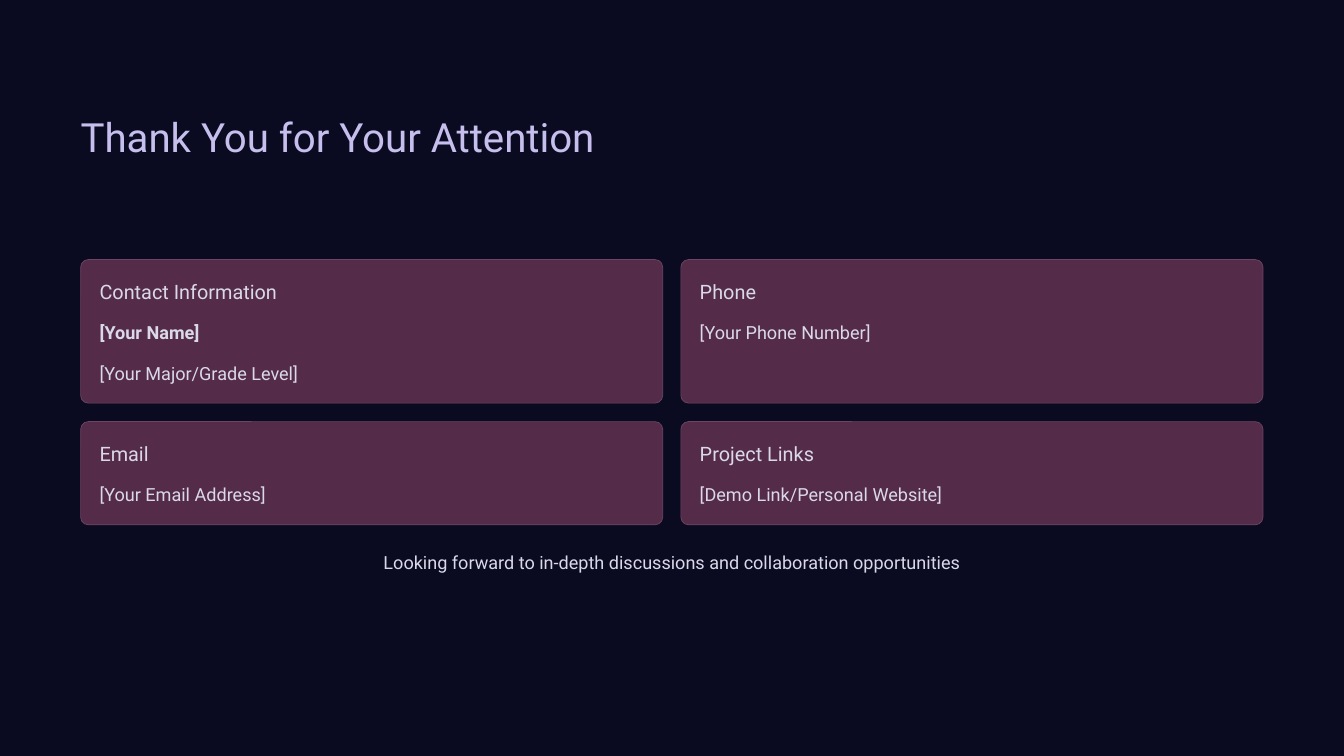
from pptx import Presentation
from pptx.dml.color import RGBColor
from pptx.enum.shapes import MSO_SHAPE
from pptx.enum.text import PP_ALIGN
from pptx.util import Cm, Pt

COLORS = {
    "background": "0A0B21",
    "title": "C6BFEE",
    "text": "DAD8E9",
    "card": "542C49",
    "border": "6D4562",
}
LEFT = 2.44
CARD_WIDTH = 17.6
COLUMN_STEP = 18.15
ROW_GAP = 0.56
PADDING = 0.57
BODY_OFFSET = 1.67
LINE_STEP = 1.22
CORNER_RADIUS = 0.23

CARD_ROWS = [
    (4.34, [
        ("Contact Information", ["[Your Name]", "[Your Major/Grade Level]"]),
        ("Phone", ["[Your Phone Number]"]),
    ]),
    (3.12, [
        ("Email", ["[Your Email Address]"]),
        ("Project Links", ["[Demo Link/Personal Website]"]),
    ]),
]


class SlideBuilder:
    font_name = "Roboto"

    def __init__(self, presentation):
        self.slide = presentation.slides.add_slide(presentation.slide_layouts[6])
        fill = self.slide.background.fill
        fill.solid()
        fill.fore_color.rgb = self.color("background")

    def color(self, name):
        return RGBColor.from_string(COLORS[name])

    def text(self, text, left, top, width, height, size=15.5, spacing=24.5,
             color="text", bold=False, align=PP_ALIGN.LEFT):
        shape = self.slide.shapes.add_textbox(Cm(left), Cm(top), Cm(width), Cm(height))
        frame = shape.text_frame
        frame.margin_left = frame.margin_right = 0
        frame.margin_top = frame.margin_bottom = 0
        frame.word_wrap = True
        frame.text = text
        paragraph = frame.paragraphs[0]
        paragraph.alignment = align
        paragraph.line_spacing = Pt(spacing)
        font = paragraph.runs[0].font
        font.name = self.font_name
        font.size = Pt(size)
        font.bold = bold
        font.color.rgb = self.color(color)

    def panel(self, left, top, width, height):
        shape = self.slide.shapes.add_shape(
            MSO_SHAPE.ROUNDED_RECTANGLE, Cm(left), Cm(top), Cm(width), Cm(height))
        shape.adjustments[0] = CORNER_RADIUS / height
        shape.shadow.inherit = False
        shape.fill.solid()
        shape.fill.fore_color.rgb = self.color("card")
        shape.line.color.rgb = self.color("border")
        shape.line.width = Pt(0.6)

    def card(self, left, top, height, heading, lines):
        self.panel(left, top, CARD_WIDTH, height)
        text_left = left + PADDING
        self.text(heading, text_left, top + PADDING, 6.12, 0.76, size=17, spacing=21.5)
        for index, line in enumerate(lines):
            self.text(line, text_left, top + BODY_OFFSET + index * LINE_STEP,
                      CARD_WIDTH - 2 * PADDING, 0.89, bold=line == "[Your Name]")


def main():
    presentation = Presentation()
    presentation.slide_width = Cm(40.64)
    presentation.slide_height = Cm(22.86)
    builder = SlideBuilder(presentation)
    builder.text("Thank You for Your Attention", LEFT, 3.35, CARD_WIDTH, 1.52,
                 size=34.5, spacing=43, color="title")
    top = 7.85
    for height, cards in CARD_ROWS:
        for column, (heading, lines) in enumerate(cards):
            builder.card(LEFT + column * COLUMN_STEP, top, height, heading, lines)
        top += height + ROW_GAP
    builder.text("Looking forward to in-depth discussions and collaboration opportunities",
                 LEFT, 16.48, COLUMN_STEP + CARD_WIDTH, 0.89, align=PP_ALIGN.CENTER)
    presentation.save("out.pptx")


if __name__ == "__main__":
    main()
